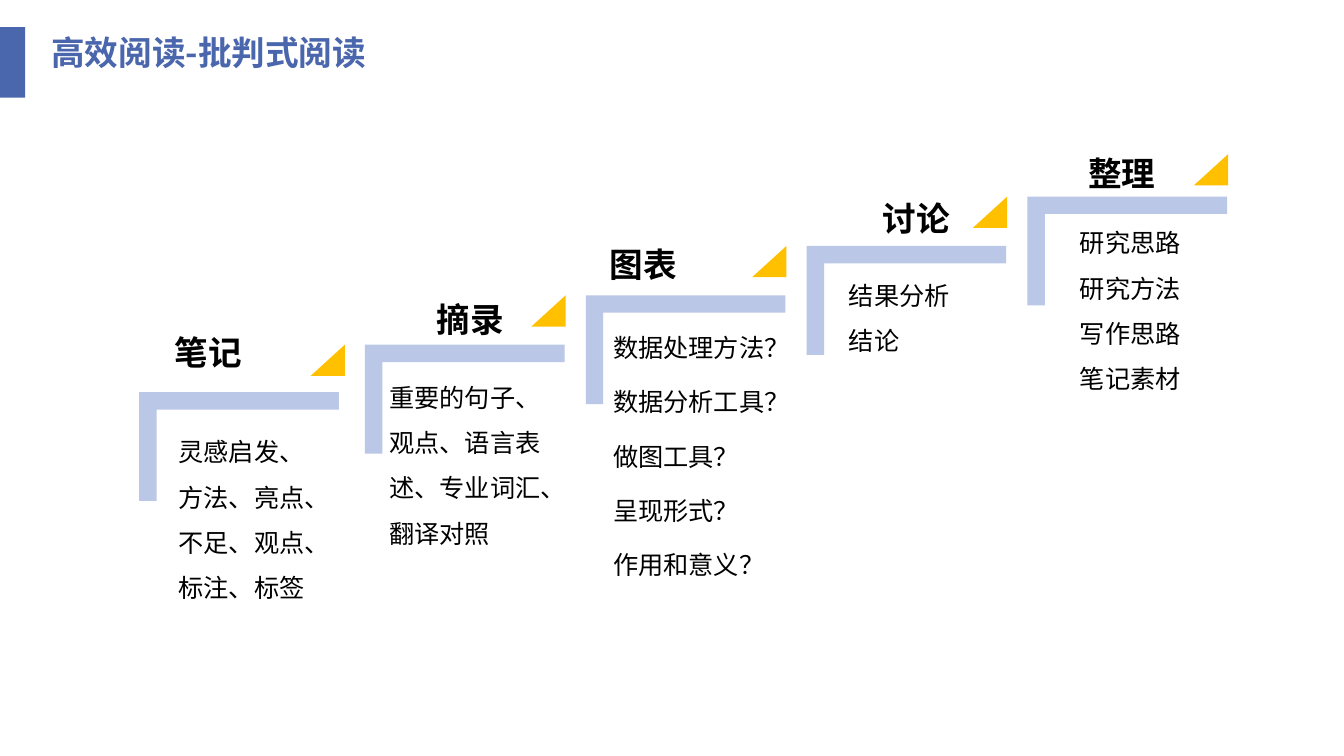
from lxml import etree
from pptx import Presentation
from pptx.dml.color import RGBColor
from pptx.enum.shapes import MSO_SHAPE as Shape
from pptx.enum.text import MSO_ANCHOR as Anchor, MSO_AUTO_SIZE as AutoSize, PP_ALIGN as Align
from pptx.oxml.ns import qn
from pptx.util import Inches, Pt

# Content
TITLE = "高效阅读-批判式阅读"
LEFT, RIGHT = Align.LEFT, Align.RIGHT
NOTE = {"insets": (0.04,) * 4, "line_spacing": 1.5, "space_after": Pt(6.3)}
LIST = {"line_spacing": 1.5, "grow": True}
# heading, its box and alignment, body lines, their box and format
STEPS = [
    ("笔记", (1.73, 3.26, 1.22, 0.46), LEFT,
     ["灵感启发、方法、亮点、不足、观点、标注、标签"], (1.73, 4.14, 1.48, 1.99), NOTE),
    ("摘录", (3.11, 2.85, 2.31, 0.64), RIGHT,
     ["重要的句子、观点、语言表述、专业词汇、翻译对照"], (3.82, 3.6, 1.79, 2.05), NOTE),
    ("图表", (6.05, 2.39, 2.01, 0.46), LEFT,
     ["数据处理方法？", "数据分析工具？", "做图工具？", "呈现形式？", "作用和意义？"],
     (6.04, 3.11, 1.79, 3.33), NOTE),
    ("讨论", (7.53, 1.84, 2.31, 0.64), RIGHT,
     ["结果分析", "结论"], (8.32, 2.58, 2.19, 0.96), LIST),
    ("整理", (9.57, 1.4, 2.31, 0.64), RIGHT,
     ["研究思路", "研究方法", "写作思路", "笔记素材"], (10.35, 2.06, 1.46, 1.92),
     {**LIST, "align": RIGHT}),
]

# Staircase grid, in inches
STEP_WIDTH, STEP_RISE = 2.19, 0.49
BRACKET_START, TRIANGLE_START = (1.43, 3.91), (3.08, 3.42)
BRACKET_WIDTH, BRACKET_HEIGHT = 1.98, 1.08
BRACKET_NUDGE = {0: (-0.05, -0.02)}
TRIANGLE_NUDGE = {4: (0, 0.07)}

FONT = "Noto Sans CJK SC"
BLUE = RGBColor(0x4A, 0x66, 0xAC)
PALE_BLUE = RGBColor(0xBB, 0xC7, 0xE7)
AMBER = RGBColor(0xFF, 0xC0, 0x00)
BLACK = RGBColor(0, 0, 0)

presentation = Presentation()
presentation.slide_width, presentation.slide_height = Inches(13.33), Inches(7.5)
slide = presentation.slides.add_slide(presentation.slide_layouts[6])


def add_block(kind, box, color, adjustments=(), rotation=0):
    shape = slide.shapes.add_shape(kind, *map(Inches, box))
    shape.shadow.inherit = False
    shape.fill.solid()
    shape.fill.fore_color.rgb = color
    shape.line.fill.background()
    shape.rotation = rotation
    for index, value in enumerate(adjustments):
        shape.adjustments[index] = value


def add_text(lines, box, size=18, bold=False, color=BLACK, align=LEFT, wrap=True, grow=False,
             anchor=Anchor.TOP, insets=(0.1, 0.05, 0.1, 0.05), **spacing):
    frame = slide.shapes.add_textbox(*map(Inches, box)).text_frame
    frame.word_wrap = wrap
    frame.auto_size = AutoSize.SHAPE_TO_FIT_TEXT if grow else AutoSize.NONE
    frame.vertical_anchor = anchor
    for side, inset in zip(("left", "top", "right", "bottom"), insets):
        setattr(frame, f"margin_{side}", Inches(inset))
    for index, line in enumerate(lines):
        paragraph = frame.paragraphs[0] if index == 0 else frame.add_paragraph()
        for name, value in {"alignment": align, **spacing}.items():
            setattr(paragraph, name, value)
        run = paragraph.add_run()
        run.text = line
        for name, value in {"name": FONT, "size": Pt(size), "bold": bold}.items():
            setattr(run.font, name, value)
        run.font.color.rgb = color
        # East Asian typeface
        etree.SubElement(run._r.get_or_add_rPr(), qn("a:ea"), typeface=FONT)


def stair_position(start, index, nudges):
    dx, dy = nudges.get(index, (0, 0))
    return start[0] + index * STEP_WIDTH + dx, start[1] - index * STEP_RISE + dy


# Title
add_text([TITLE], (0.41, 0.27, 6.5, 0.5), size=24, bold=True, color=BLUE, grow=True)
add_block(Shape.RECTANGLE, (0, 0.27, 0.25, 0.7), BLUE)

# Steps
for index, (heading, heading_box, heading_align, lines, body_box, body_format) in enumerate(STEPS):
    # Bracket: a corner turned by 90 degrees about its centre
    left, top = stair_position(BRACKET_START, index, BRACKET_NUDGE)
    turn = (BRACKET_WIDTH - BRACKET_HEIGHT) / 2
    add_block(Shape.CORNER, (left + turn, top - turn, BRACKET_HEIGHT, BRACKET_WIDTH),
              PALE_BLUE, (0.16, 0.16), rotation=90)
    # Triangle
    triangle = stair_position(TRIANGLE_START, index, TRIANGLE_NUDGE)
    add_block(Shape.ISOSCELES_TRIANGLE, (*triangle, 0.34, 0.31), AMBER, (1,))
    # Heading and body
    add_text([heading], heading_box, size=24, bold=True, align=heading_align, wrap=False,
             anchor=Anchor.MIDDLE, insets=(0, 0, 0.42, 0))
    add_text(lines, body_box, **body_format)

presentation.save("out.pptx")
